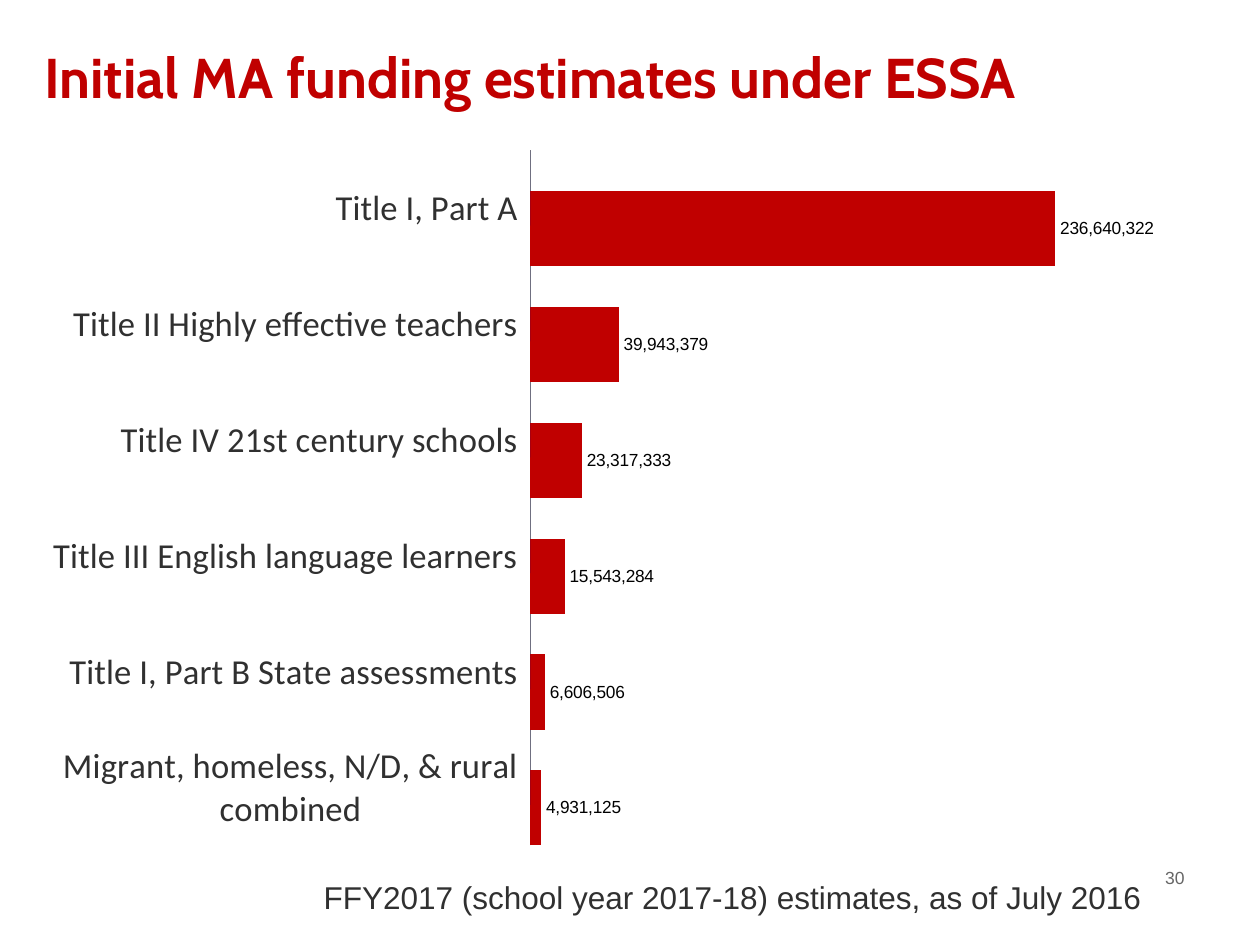
from dataclasses import dataclass

from lxml import etree
from pptx import Presentation
from pptx.chart.data import CategoryChartData
from pptx.dml.color import RGBColor
from pptx.enum.chart import XL_CHART_TYPE as ChartType
from pptx.enum.chart import XL_LABEL_POSITION as LabelPosition
from pptx.enum.chart import XL_TICK_LABEL_POSITION as TickLabels
from pptx.enum.chart import XL_TICK_MARK as TickMark
from pptx.enum.text import MSO_ANCHOR as Anchor
from pptx.enum.text import MSO_AUTO_SIZE as AutoSize
from pptx.enum.text import PP_ALIGN as Align
from pptx.oxml.ns import qn
from pptx.util import Cm, Pt

RED = RGBColor(0xC0, 0x00, 0x00)
NAVY = RGBColor(0x00, 0x00, 0x80)
CHARCOAL = RGBColor(0x30, 0x30, 0x30)
GRAY = RGBColor(0x66, 0x66, 0x66)
AXIS_GRAY = RGBColor(0x80, 0x80, 0x80)
BLACK = RGBColor(0x00, 0x00, 0x00)


@dataclass(frozen=True)
class Area:
    left: float
    top: float
    width: float
    height: float

    def lengths(self) -> tuple:
        return Cm(self.left), Cm(self.top), Cm(self.width), Cm(self.height)


@dataclass(frozen=True)
class Grant:
    name: str
    dollars: int


TITLE_AREA = Area(0.64, 0, 24.77, 2.34)
CHART_AREA = Area(1.07, 2.74, 22.22, 14.6)
NOTE_AREA = Area(1.47, 17.58, 21.79, 1.02)
NUMBER_AREA = Area(18.21, 17.35, 5.92, 1.27)

GRANTS = [
    Grant("Migrant, homeless, N/D, & rural combined", 4931125),
    Grant("Title I, Part B State assessments", 6606506),
    Grant("Title III English language learners", 15543284),
    Grant("Title IV 21st century schools", 23317333),
    Grant("Title II Highly effective teachers", 39943379),
    Grant("Title I, Part A", 236640322),
]


def format_font(font, name: str, size: float, color: RGBColor, bold: bool = False) -> None:
    font.name = name
    font.size = Pt(size)
    font.bold = bold
    font.color.rgb = color


def write_text(box, text: str, *, name: str, size: float, color: RGBColor,
               bold: bool = False, align=Align.LEFT, anchor=Anchor.TOP) -> None:
    frame = box.text_frame
    frame.word_wrap = True
    frame.auto_size = AutoSize.NONE
    frame.vertical_anchor = anchor
    para = frame.paragraphs[0]
    para.alignment = align
    span = para.add_run()
    span.text = text
    format_font(span.font, name, size, color, bold)


def set_plot_layout(chart, **fractions: float) -> None:
    plot_area = chart.plots[0]._element.getparent()
    for old in plot_area.findall(qn("c:layout")):
        plot_area.remove(old)
    layout = etree.Element(qn("c:layout"))
    manual = etree.SubElement(layout, qn("c:manualLayout"))
    settings = {"layoutTarget": "inner", "xMode": "edge", "yMode": "edge", **fractions}
    for tag, value in settings.items():
        etree.SubElement(manual, qn(f"c:{tag}")).set("val", str(value))
    plot_area.insert(0, layout)


def add_funding_chart(page, area: Area, grants: list[Grant]) -> None:
    data = CategoryChartData(number_format="#,##0")
    data.categories = [grant.name for grant in grants]
    data.add_series("Series 1", [grant.dollars for grant in grants])
    data.add_series("Series 2", [0] * len(grants))
    chart = page.shapes.add_chart(ChartType.BAR_CLUSTERED, *area.lengths(), data).chart
    chart.has_legend = False
    chart.has_title = False
    format_font(chart.font, "Calibri", 10, CHARCOAL)

    plot = chart.plots[0]
    plot.gap_width = 0
    plot.overlap = 46
    plot.vary_by_categories = False
    for series, color in zip(plot.series, (RED, NAVY)):
        series.format.fill.solid()
        series.format.fill.fore_color.rgb = color
        series.invert_if_negative = False

    labels = plot.series[0].data_labels
    labels.show_value = True
    labels.number_format = "#,##0"
    labels.number_format_is_linked = False
    labels.position = LabelPosition.OUTSIDE_END
    format_font(labels.font, "Arial", 10, BLACK)

    names = chart.category_axis
    names.major_tick_mark = TickMark.NONE
    names.minor_tick_mark = TickMark.NONE
    names.tick_label_position = TickLabels.LOW
    names.format.line.color.rgb = AXIS_GRAY
    names.format.line.width = Pt(0.75)
    format_font(names.tick_labels.font, "Calibri", 20, CHARCOAL)

    amounts = chart.value_axis
    amounts.minimum_scale = 0
    amounts.maximum_scale = 250_000_000
    amounts.has_major_gridlines = False
    amounts.visible = False
    set_plot_layout(chart, x=0.43, y=0.02, w=0.51, h=0.96)


def main() -> None:
    deck = Presentation()
    deck.slide_width, deck.slide_height = Cm(25.4), Cm(19.05)
    page = deck.slides.add_slide(deck.slide_layouts[5])

    number = page.shapes.add_textbox(*NUMBER_AREA.lengths())
    write_text(number, "30", name="Arial", size=10, color=GRAY, align=Align.RIGHT)

    title = page.shapes.title
    title.left, title.top, title.width, title.height = TITLE_AREA.lengths()
    write_text(title, "Initial MA funding estimates under ESSA", name="Cabin",
               size=32, color=RED, bold=True, anchor=Anchor.BOTTOM)

    note = page.shapes.add_textbox(*NOTE_AREA.lengths())
    write_text(note, "FFY2017 (school year 2017-18) estimates, as of July 2016",
               name="Arial", size=18, color=CHARCOAL, align=Align.RIGHT)

    add_funding_chart(page, CHART_AREA, GRANTS)
    deck.save("out.pptx")


if __name__ == "__main__":
    main()
